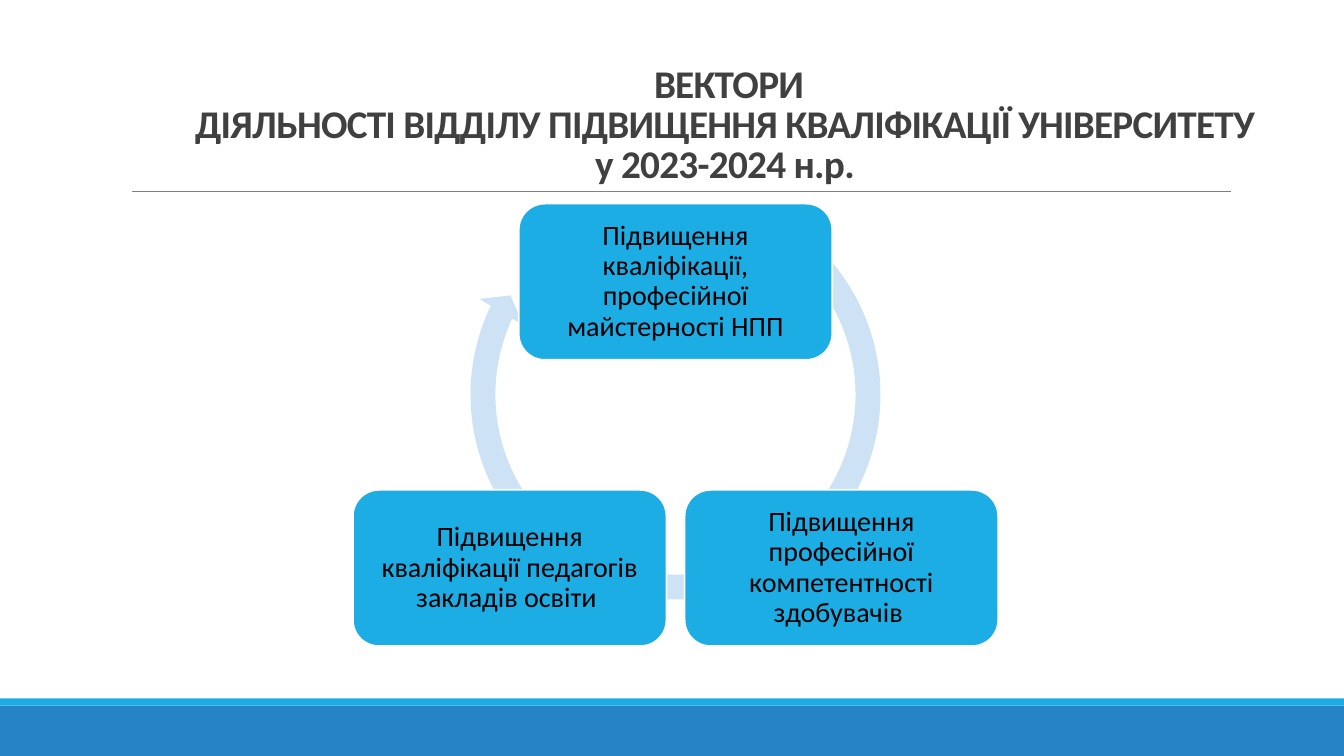
from dataclasses import dataclass

from pptx import Presentation
from pptx.dml.color import RGBColor
from pptx.enum import shapes, text
from pptx.oxml import ns, xmlchemy
from pptx.util import Inches, Pt


@dataclass(frozen=True)
class Theme:
    font: str = "Calibri"
    title_size: int = 28
    card_size: int = 20
    title: str = "404040"
    ink: str = "000000"
    accent: str = "1CADE4"
    band: str = "2683C6"
    ring: str = "CDE3F5"
    rule: str = "808080"
    edge: str = "FFFFFF"


THEME = Theme()
TITLE_LINES = [
    "ВЕКТОРИ",
    "ДІЯЛЬНОСТІ ВІДДІЛУ ПІДВИЩЕННЯ КВАЛІФІКАЦІЇ УНІВЕРСИТЕТУ ",
    "у 2023-2024 н.р. ",
]
VECTORS = [
    "Підвищення кваліфікації, професійної майстерності НПП",
    "Підвищення професійної компетентності здобувачів ",
    "Підвищення кваліфікації педагогів закладів освіти ",
]


def add_filled(page, kind, box, color):
    shape = page.shapes.add_shape(kind, *map(Inches, box))
    shape.shadow.inherit = False
    shape.fill.solid()
    shape.fill.fore_color.rgb = RGBColor.from_string(color)
    shape.line.fill.background()
    return shape


def style_para(para, size, color, spacing, bold=False):
    para.alignment = text.PP_ALIGN.CENTER
    para.line_spacing = spacing
    para.font.name = THEME.font
    para.font.size = Pt(size)
    para.font.bold = bold
    para.font.color.rgb = RGBColor.from_string(color)


def add_footer(page, box):
    left, top, width, height = box
    stripe = 0.07
    rectangle = shapes.MSO_SHAPE.RECTANGLE
    add_filled(page, rectangle, (left, top + stripe, width, height - stripe), THEME.band)
    add_filled(page, rectangle, (left, top, width, stripe), THEME.accent)


def add_title(page, box):
    left, top, width, height = box
    bottom = top + height
    rule = page.shapes.add_connector(
        shapes.MSO_CONNECTOR.STRAIGHT,
        *map(Inches, (left + 0.11, bottom, left + 11.01, bottom)),
    )
    rule.line.color.rgb = RGBColor.from_string(THEME.rule)
    rule.line.width = Pt(0.5)
    rule._element.spPr.append(xmlchemy.OxmlElement("a:effectLst"))

    frame = page.shapes.add_textbox(*map(Inches, box)).text_frame
    frame.word_wrap = True
    frame.vertical_anchor = text.MSO_ANCHOR.BOTTOM
    para = frame.paragraphs[0]
    style_para(para, THEME.title_size, THEME.title, 0.85, bold=True)
    for index, line in enumerate(TITLE_LINES):
        if index:
            para.add_line_break()
        para.add_run().text = line
    for props in para._p.iter(ns.qn("a:defRPr"), ns.qn("a:rPr")):
        props.set("spc", "-50")


def add_card(page, box, label):
    card = add_filled(page, shapes.MSO_SHAPE.ROUNDED_RECTANGLE, box, THEME.accent)
    card.line.color.rgb = RGBColor.from_string(THEME.edge)
    card.line.width = Pt(1.25)
    frame = card.text_frame
    frame.word_wrap = True
    frame.vertical_anchor = text.MSO_ANCHOR.MIDDLE
    frame.margin_left = frame.margin_right = Inches(0.08)
    frame.margin_top = frame.margin_bottom = Inches(0.08)
    para = frame.paragraphs[0]
    para.text = label
    style_para(para, THEME.card_size, THEME.ink, 0.9)


def add_cycle(page, box):
    left, top, width, height = box
    card_width, card_height, ring_size = 3.11, 1.55, 4.33
    ring = add_filled(
        page,
        shapes.MSO_SHAPE.CIRCULAR_ARROW,
        (left + (width - ring_size) / 2, top - 0.27, ring_size, ring_size),
        THEME.ring,
    )
    for index, value in enumerate((0.057, 3.405, 123.208, 183.424, 0.059)):
        ring.adjustments[index] = value

    right, bottom = width - card_width, height - card_height
    corners = [(right / 2, 0), (right, bottom), (0, bottom)]
    for (x, y), label in zip(corners, VECTORS):
        add_card(page, (left + x, top + y, card_width, card_height), label)


def main():
    deck = Presentation()
    deck.slide_width, deck.slide_height = Inches(13.33), Inches(7.5)
    page = deck.slides.add_slide(deck.slide_layouts[6])
    add_footer(page, (0, 6.93, 13.33, 0.57))
    add_title(page, (1.2, 0.31, 12.06, 1.59))
    add_cycle(page, (3.5, 2.02, 6.4, 4.39))
    deck.save("out.pptx")


if __name__ == "__main__":
    main()
